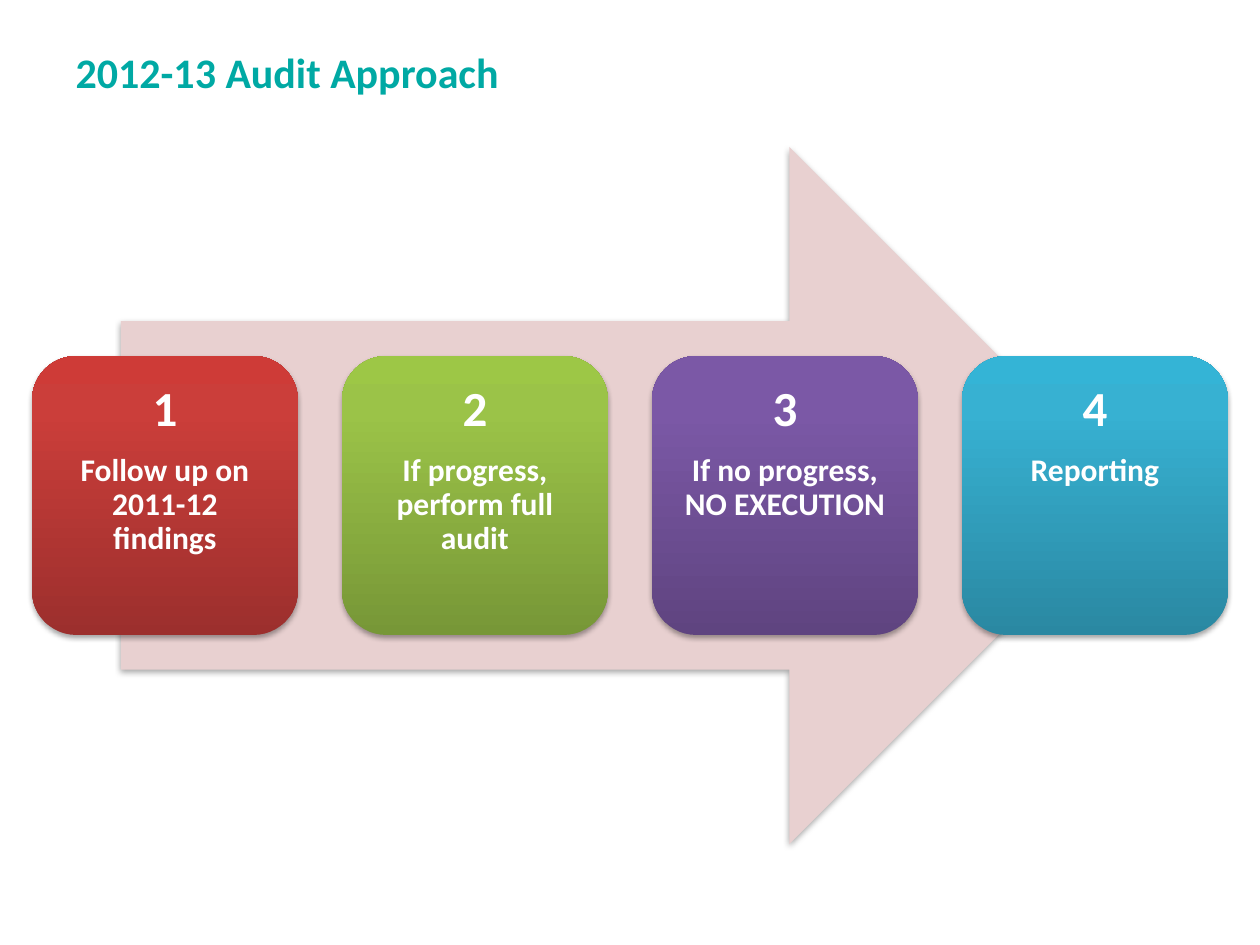
from copy import deepcopy

from lxml.etree import SubElement
from pptx import Presentation
from pptx.dml.color import RGBColor
from pptx.enum.shapes import MSO_SHAPE
from pptx.enum.text import MSO_ANCHOR, PP_ALIGN
from pptx.oxml.ns import qn
from pptx.util import Pt

# Content: each step has its label and its gradient from bottom to top
TITLE = "2012-13 Audit Approach"
STEPS = [
    ("Follow up on 2011-12 findings", ("9C2F2D", "CB3E3A", "CE3B37")),
    ("If progress, perform full audit", ("779737", "9BC348", "9DC746")),
    ("If no progress, NO EXECUTION", ("5F4480", "7B58A6", "7C57A8")),
    ("Reporting", ("2A88A2", "37B1D2", "34B4D6")),
]


class Theme:
    font = "Calibri"
    title_color = "00A9A4"
    arrow_color = "E8D0D0"
    text_color = "FFFFFF"
    shadow_color = "000000"
    title_size = 24
    number_size = 28
    label_size = 18
    gradient_positions = (0, 0.8, 1)


# Layout in px, 126 to the inch
EMU_PER_PX = 914400 / 126
SLIDE_SIZE = (1260, 945)
TITLE_BOX = (63, 38, 1113, 67)
ARROW_BOX = (121, 147, 1017, 697)
CARD_LEFT, CARD_TOP, CARD_WIDTH, CARD_HEIGHT = 32, 356, 266, 279
CARD_GAP = 44
CARD_INSET = 15


def px(value):
    return round(value * EMU_PER_PX)


def style_paragraph(paragraph, size, color):
    paragraph.font.name = Theme.font
    paragraph.font.size = Pt(size)
    paragraph.font.bold = True
    paragraph.font.color.rgb = RGBColor.from_string(color)


def add_soft_shadow(shape):
    shape.shadow.inherit = False
    effects = shape.element.spPr.find(qn("a:effectLst"))
    shadow = SubElement(effects, qn("a:outerShdw"), blurRad="40000",
                        dist="23000", dir="5400000", rotWithShape="0")
    color = SubElement(shadow, qn("a:srgbClr"), val=Theme.shadow_color)
    SubElement(color, qn("a:alpha"), val="35000")


def add_block(slide, kind, box):
    shape = slide.shapes.add_shape(kind, *map(px, box))
    shape.line.fill.background()
    add_soft_shadow(shape)
    return shape


def fill_gradient(shape, colors):
    shape.fill.gradient()
    shape.fill.gradient_angle = 90
    stop_list = shape.element.spPr.find(f".//{qn('a:gsLst')}")
    stop_list.append(deepcopy(stop_list[-1]))
    for stop, color, position in zip(shape.fill.gradient_stops, colors,
                                     Theme.gradient_positions):
        stop.color.rgb = RGBColor.from_string(color)
        stop.position = position


def add_card(slide, index, label, colors):
    left = CARD_LEFT + index * (CARD_WIDTH + CARD_GAP)
    card = add_block(slide, MSO_SHAPE.ROUNDED_RECTANGLE,
                     (left, CARD_TOP, CARD_WIDTH, CARD_HEIGHT))
    fill_gradient(card, colors)

    frame = card.text_frame
    frame.word_wrap = True
    frame.vertical_anchor = MSO_ANCHOR.TOP
    frame.margin_left = frame.margin_right = px(CARD_INSET)
    frame.margin_top = frame.margin_bottom = px(CARD_INSET)
    frame.text = f"{index + 1}\n{label}"
    for paragraph, size in zip(frame.paragraphs,
                               (Theme.number_size, Theme.label_size)):
        paragraph.alignment = PP_ALIGN.CENTER
        paragraph.line_spacing = 0.9
        paragraph.space_after = Pt(round(size * 0.35))
        style_paragraph(paragraph, size, Theme.text_color)


def main():
    presentation = Presentation()
    presentation.slide_width, presentation.slide_height = map(px, SLIDE_SIZE)
    slide = presentation.slides.add_slide(presentation.slide_layouts[5])

    # Title
    title = slide.shapes.title
    title.left, title.top, title.width, title.height = map(px, TITLE_BOX)
    title.text_frame.text = TITLE
    title.text_frame.vertical_anchor = MSO_ANCHOR.MIDDLE
    heading = title.text_frame.paragraphs[0]
    heading.alignment = PP_ALIGN.LEFT
    style_paragraph(heading, Theme.title_size, Theme.title_color)

    # Arrow behind the steps
    arrow = add_block(slide, MSO_SHAPE.RIGHT_ARROW, ARROW_BOX)
    arrow.fill.solid()
    arrow.fill.fore_color.rgb = RGBColor.from_string(Theme.arrow_color)

    # Step cards
    for index, (label, colors) in enumerate(STEPS):
        add_card(slide, index, label, colors)

    presentation.save("out.pptx")


if __name__ == "__main__":
    main()
